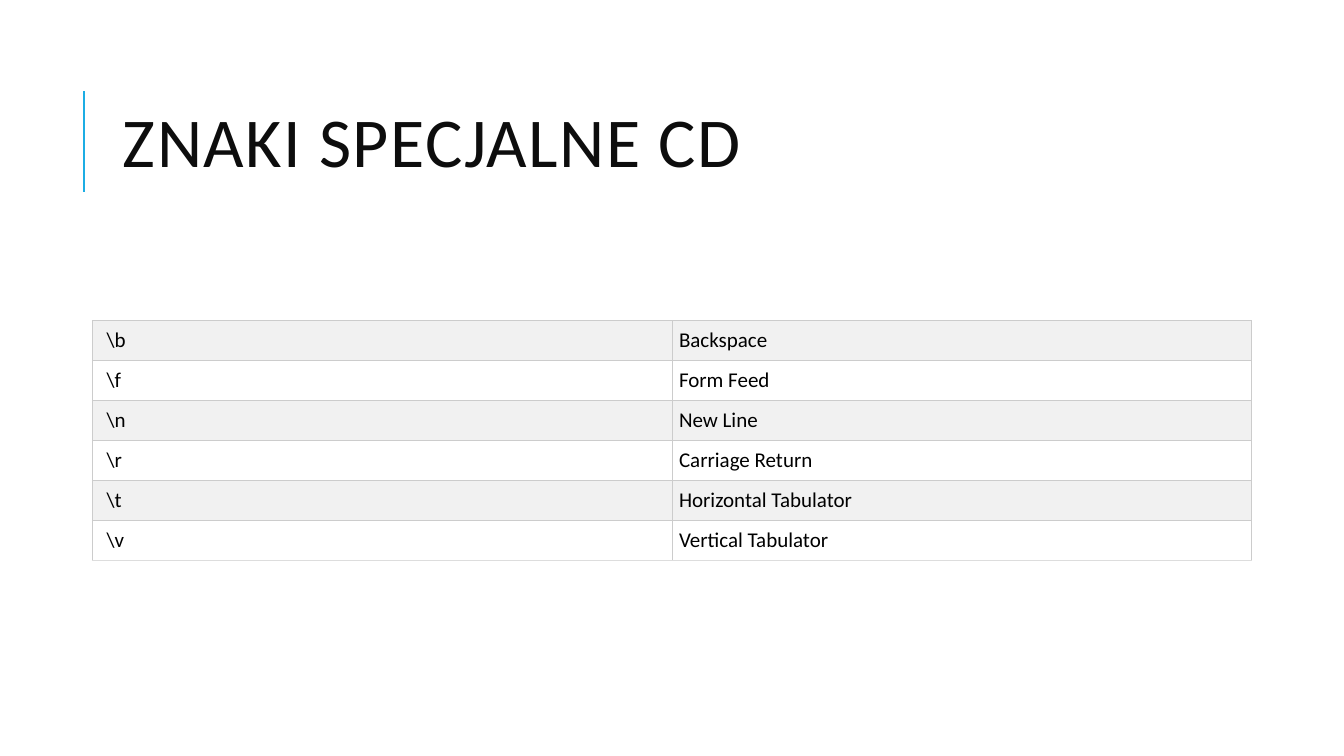
from dataclasses import dataclass

from lxml.etree import SubElement
from pptx import Presentation
from pptx.dml.color import RGBColor
from pptx.enum.shapes import MSO_CONNECTOR
from pptx.enum.text import MSO_ANCHOR, PP_ALIGN
from pptx.oxml.ns import qn
from pptx.slide import Slide
from pptx.table import _Cell
from pptx.text.text import _Paragraph
from pptx.util import Inches, Pt

BLUE = RGBColor(0x1C, 0xAD, 0xE4)
INK = RGBColor(0x0D, 0x0D, 0x0D)
BLACK = RGBColor(0x00, 0x00, 0x00)
WHITE = RGBColor(0xFF, 0xFF, 0xFF)
BAND = RGBColor(0xF1, 0xF1, 0xF1)
RULE = RGBColor(0xCC, 0xCC, 0xCC)
EDGE = RGBColor(0xDD, 0xDD, 0xDD)

WIDTH, HEIGHT = Inches(13.33), Inches(7.5)
COLS, ROWS = 160, 90
FACE = "Calibri"


@dataclass(frozen=True)
class Sign:
    code: str
    name: str


SIGNS = (
    Sign(r"\b", "Backspace"),
    Sign(r"\f", "Form Feed"),
    Sign(r"\n", "New Line"),
    Sign(r"\r", "Carriage Return"),
    Sign(r"\t", "Horizontal Tabulator"),
    Sign(r"\v", "Vertical Tabulator"),
)


def col(count: float) -> int:
    return round(WIDTH * count / COLS)


def row(count: float) -> int:
    return round(HEIGHT * count / ROWS)


def set_font(para: _Paragraph, size: float, color: RGBColor) -> None:
    para.font.name = FACE
    para.font.size = Pt(size)
    para.font.bold = False
    para.font.color.rgb = color


def draw_title(slide: Slide, text: str) -> None:
    title = slide.shapes.title
    title.left, title.top = col(13.44), row(7.68)
    title.width, title.height = col(127.6), row(19.68)
    frame = title.text_frame
    frame.text = text
    frame.word_wrap = True
    frame.vertical_anchor = MSO_ANCHOR.MIDDLE
    para = frame.paragraphs[0]
    para.alignment = PP_ALIGN.LEFT
    para.line_spacing = 0.8
    set_font(para, 50, INK)
    para.runs[0].font._element.set("spc", "100")


def draw_bar(slide: Slide) -> None:
    bar = slide.shapes.add_connector(
        MSO_CONNECTOR.STRAIGHT, col(10), row(22.8), col(10), row(10.8)
    )
    bar.line.color.rgb = BLUE
    bar.line.width = Pt(1.5)
    SubElement(bar._element.spPr, qn("a:effectLst"))


def set_edges(cell: _Cell, base: RGBColor) -> None:
    props = cell._tc.get_or_add_tcPr()
    for side, color in zip("LRTB", (RULE, RULE, RULE, base)):
        line = SubElement(props, qn(f"a:ln{side}"), w=str(Pt(0.75)))
        fill = SubElement(line, qn("a:solidFill"))
        SubElement(fill, qn("a:srgbClr"), val=str(color))


def draw_cell(cell: _Cell, text: str, inset: float, fill: RGBColor, base: RGBColor) -> None:
    set_edges(cell, base)
    cell.fill.solid()
    cell.fill.fore_color.rgb = fill
    cell.margin_left = Inches(inset)
    cell.margin_right = cell.margin_top = cell.margin_bottom = Inches(0.07)
    cell.text = text
    set_font(cell.text_frame.paragraphs[0], 15, BLACK)


def draw_table(slide: Slide, signs: tuple[Sign, ...]) -> None:
    table = slide.shapes.add_table(
        len(signs), 2, col(11), row(38.16), col(138), row(4.76 * len(signs))
    ).table
    table.first_row = table.horz_banding = False
    for index, sign in enumerate(signs):
        fill = WHITE if index % 2 else BAND
        base = EDGE if index == len(signs) - 1 else RULE
        draw_cell(table.cell(index, 0), sign.code, 0.14, fill, base)
        draw_cell(table.cell(index, 1), sign.name, 0.07, fill, base)


def main() -> None:
    deck = Presentation()
    deck.slide_width, deck.slide_height = WIDTH, HEIGHT
    slide = deck.slides.add_slide(deck.slide_layouts[5])
    draw_bar(slide)
    draw_title(slide, "ZNAKI SPECJALNE CD")
    draw_table(slide, SIGNS)
    deck.save("out.pptx")


if __name__ == "__main__":
    main()
